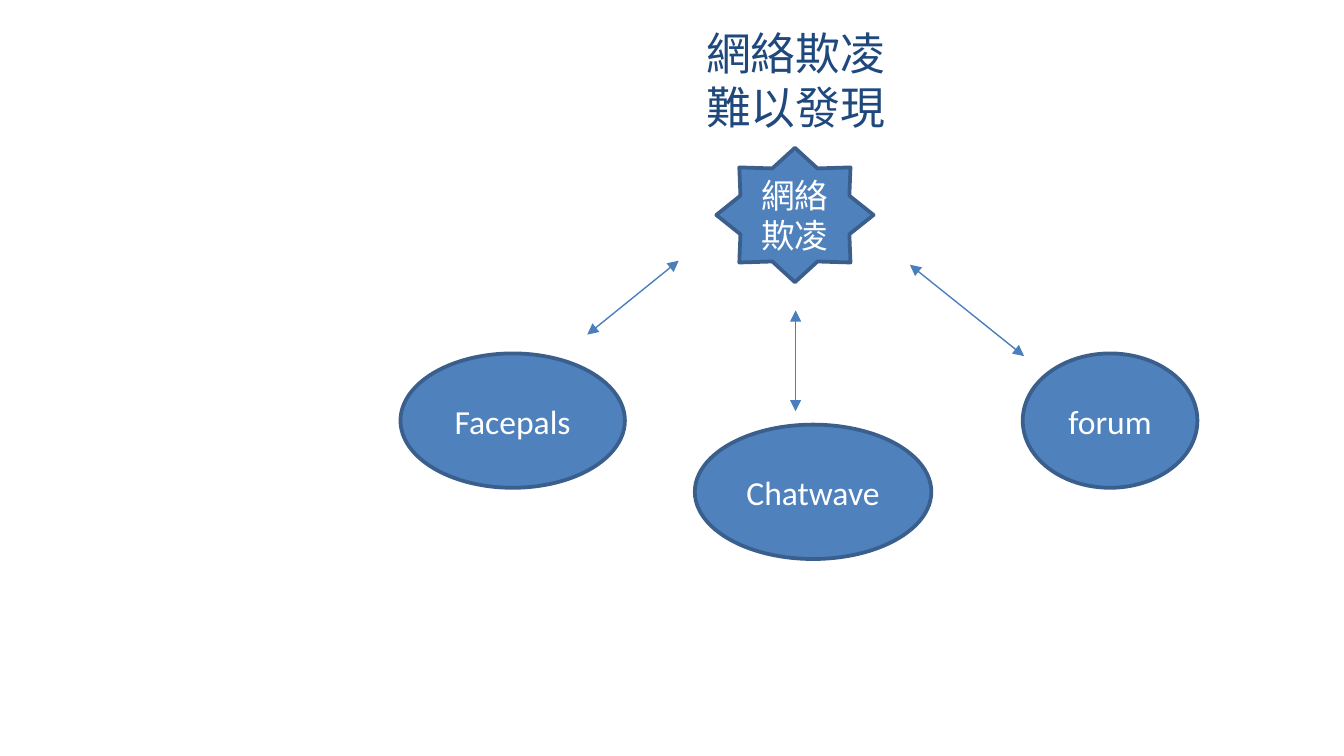
from lxml.etree import SubElement
from pptx import Presentation
from pptx.dml.color import RGBColor
from pptx.enum.shapes import MSO_CONNECTOR, MSO_SHAPE as Preset
from pptx.enum.text import MSO_ANCHOR, PP_ALIGN
from pptx.oxml.ns import qn
from pptx.util import Inches, Pt

# Content
WIDTH = 10
HEIGHT = WIDTH * 9 / 16
FONT = "Calibri"
NAVY, BLUE, EDGE, ARROW, WHITE = "1F497D", "4F81BD", "3A5F8C", "4B7EBC", "FFFFFF"
TITLE_LINES = ["網絡欺凌", "難以發現"]
TITLE_BOX = (2.58, 0.11, 6.68, 0.96)
NODE_HEIGHT = 1
UPPER_ROW, LOWER_ROW = 2.63, 3.16

# Text, preset, left, top, width
NODES = [
    ("網絡欺凌", Preset.STAR_8_POINT, 5.33, 1.1, 1.17),
    ("Facepals", Preset.OVAL, 2.98, UPPER_ROW, 1.67),
    ("forum", Preset.OVAL, 7.61, UPPER_ROW, 1.3),
    ("Chatwave", Preset.OVAL, 5.17, LOWER_ROW, 1.76),
]

# Start and end of each arrow, from the star towards a channel
ARROWS = [
    ((5.05, 1.94), (4.37, 2.49)),
    ((5.92, 2.31), (5.92, 3.06)),
    ((6.77, 1.97), (7.62, 2.65)),
]


def color(value):
    return RGBColor.from_string(value)


def write(shape, lines, size, text_color):
    frame = shape.text_frame
    frame.word_wrap = True
    frame.vertical_anchor = MSO_ANCHOR.MIDDLE
    paragraph = frame.paragraphs[0]
    paragraph.alignment = PP_ALIGN.CENTER
    for index, line in enumerate(lines):
        if index:
            paragraph.add_line_break()
        run = paragraph.add_run()
        run.text = line
        run.font.name = FONT
        run.font.size = Pt(size)
        run.font.color.rgb = color(text_color)


def add_node(slide, text, preset, left, top, width):
    box = map(Inches, (left, top, width, NODE_HEIGHT))
    shape = slide.shapes.add_shape(preset, *box)
    shape.shadow.inherit = False
    shape.fill.solid()
    shape.fill.fore_color.rgb = color(BLUE)
    shape.line.color.rgb = color(EDGE)
    shape.line.width = Pt(2)
    write(shape, [text], 18, WHITE)


def add_arrow(slide, start, end):
    points = map(Inches, (*start, *end))
    connector = slide.shapes.add_connector(MSO_CONNECTOR.STRAIGHT, *points)
    connector.line.color.rgb = color(ARROW)
    connector.line.width = Pt(0.75)
    line = connector.line._get_or_add_ln()
    for tag in ("a:headEnd", "a:tailEnd"):
        SubElement(line, qn(tag), type="triangle")
    SubElement(connector._element.spPr, qn("a:effectLst"))


def main():
    presentation = Presentation()
    presentation.slide_width = Inches(WIDTH)
    presentation.slide_height = Inches(HEIGHT)
    slide = presentation.slides.add_slide(presentation.slide_layouts[5])

    # Title
    title = slide.shapes.title
    title.left, title.top, title.width, title.height = map(Inches, TITLE_BOX)
    write(title, TITLE_LINES, 24, NAVY)

    # Star, channels and arrows
    for node in NODES:
        add_node(slide, *node)
    for start, end in ARROWS:
        add_arrow(slide, start, end)

    presentation.save("out.pptx")


if __name__ == "__main__":
    main()
